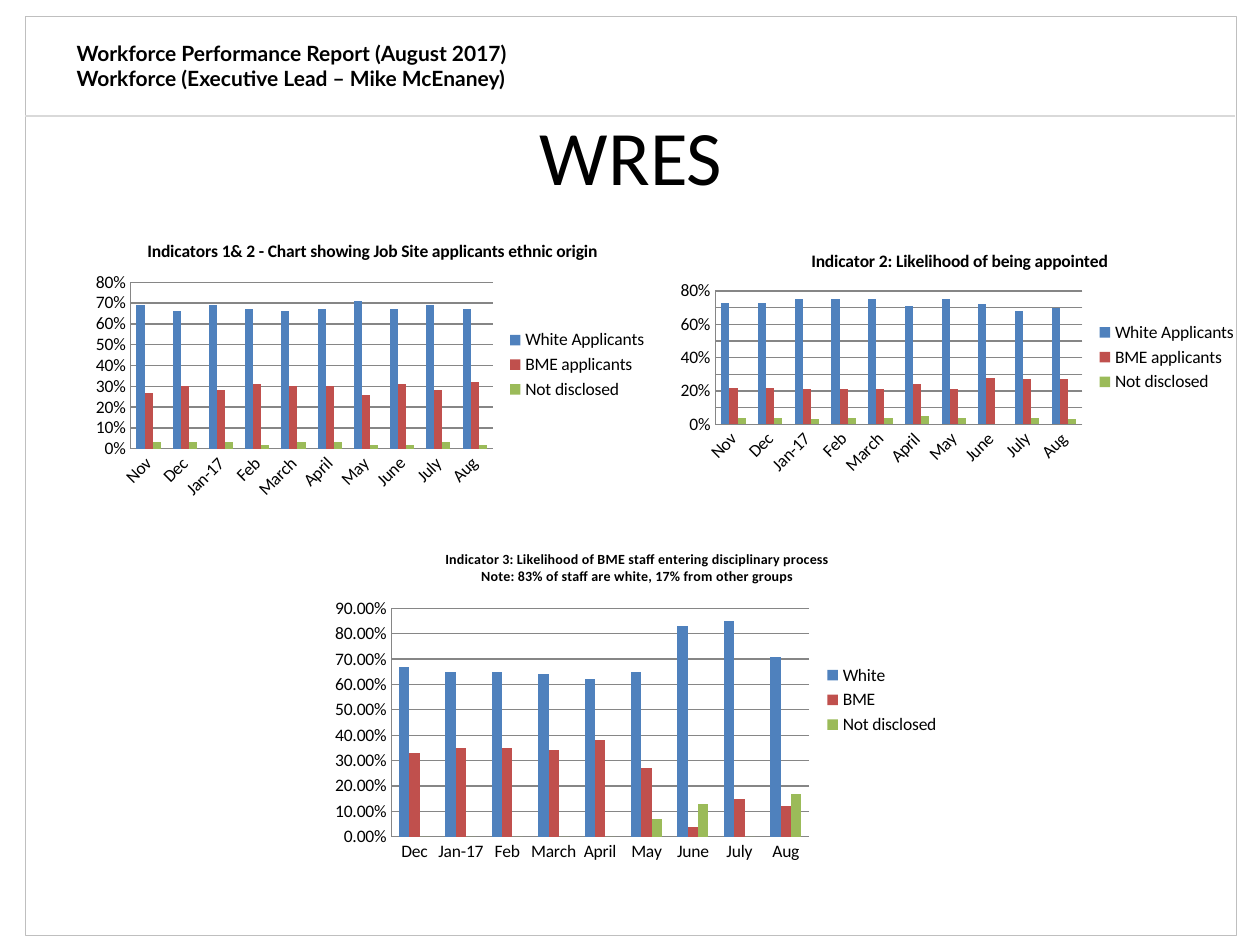
from pptx import Presentation
from pptx.chart.data import CategoryChartData
from pptx.dml.color import RGBColor
from pptx.enum.chart import XL_CHART_TYPE as ChartType, XL_LEGEND_POSITION as LegendPosition, XL_TICK_MARK as TickMark
from pptx.enum.shapes import MSO_CONNECTOR as Connector, MSO_SHAPE as Shape
from pptx.enum.text import MSO_ANCHOR as Anchor, PP_ALIGN as Align
from pptx.oxml.ns import qn
from pptx.util import Pt
from lxml.etree import SubElement

# Content
HEADER = ["Workforce Performance Report (August 2017)",
          "Workforce (Executive Lead – Mike McEnaney)"]
TITLE = "WRES"
MONTHS = ["Nov", "Dec", "Jan-17", "Feb", "March", "April", "May", "June", "July", "Aug"]
APPLICANT_GROUPS = ["White Applicants", "BME applicants", "Not disclosed"]
STAFF_GROUPS = ["White", "BME", "Not disclosed"]
CHARTS = [
    dict(title=["Indicators 1& 2 - Chart showing Job Site applicants ethnic origin"], title_size=10,
         place=(48.24, 128.16, 329.04, 160.56), months=MONTHS, top=0.8, format="0%",
         groups=APPLICANT_GROUPS, values=[
             [0.69, 0.66, 0.69, 0.67, 0.66, 0.67, 0.71, 0.67, 0.69, 0.67],
             [0.27, 0.3, 0.28, 0.31, 0.3, 0.3, 0.26, 0.31, 0.28, 0.32],
             [0.03, 0.03, 0.03, 0.02, 0.03, 0.03, 0.02, 0.02, 0.03, 0.02]]),
    dict(title=["Indicator 2: Likelihood of being appointed"], title_size=10,
         place=(382.32, 133.92, 331.92, 140.4), months=MONTHS, top=0.8, format="0%",
         groups=APPLICANT_GROUPS, values=[
             [0.73, 0.73, 0.75, 0.75, 0.75, 0.71, 0.75, 0.72, 0.68, 0.7],
             [0.22, 0.22, 0.21, 0.21, 0.21, 0.24, 0.21, 0.28, 0.27, 0.27],
             [0.04, 0.04, 0.03, 0.04, 0.04, 0.05, 0.04, None, 0.04, 0.03]]),
    dict(title=["Indicator 3: Likelihood of BME staff entering disciplinary process",
                "Note: 83% of staff are white, 17% from other groups"], title_size=8,
         place=(184.32, 303.84, 360, 192.24), months=MONTHS[1:], top=0.9, format="0.00%",
         groups=STAFF_GROUPS, values=[
             [0.67, 0.65, 0.65, 0.64, 0.62, 0.65, 0.83, 0.85, 0.71],
             [0.33, 0.35, 0.35, 0.34, 0.38, 0.27, 0.04, 0.15, 0.12],
             [0, 0, 0, 0, 0, 0.07, 0.13, 0, 0.17]]),
]
COLORS = dict(text="000000", frame="BFBFBF", rule="D9D9D9", axis="868686")
SERIES_COLORS = ["4F81BD", "C0504D", "9BBB59"]


def color(value):
    return RGBColor.from_string(value)


def style_font(font, name, size, bold=False):
    font.name, font.size, font.bold = name, Pt(size), bold
    font.color.rgb = color(COLORS["text"])


def style_line(line, value, width):
    line.color.rgb = color(value)
    line.width = Pt(width)


def add_column_chart(page, item):
    data = CategoryChartData(number_format=item["format"])
    data.categories = item["months"]
    for name, values in zip(item["groups"], item["values"]):
        data.add_series(name, values)
    place = [Pt(length) for length in item["place"]]
    chart = page.shapes.add_chart(ChartType.COLUMN_CLUSTERED, *place, data).chart
    style_font(chart.font, "Calibri", 10)

    # Chart title
    chart.has_title = True
    frame = chart.chart_title.text_frame
    for index, line in enumerate(item["title"]):
        para = frame.paragraphs[0] if index == 0 else frame.add_paragraph()
        span = para.add_run()
        span.text = line
        style_font(span.font, "Calibri", item["title_size"], True)
    chart.chart_title.include_in_layout = False

    # Legend
    chart.has_legend = True
    chart.legend.position = LegendPosition.RIGHT
    chart.legend.include_in_layout = False

    # Axes
    value_axis = chart.value_axis
    value_axis.minimum_scale, value_axis.maximum_scale = 0, item["top"]
    value_axis.major_unit = 0.1
    value_axis.tick_labels.number_format = item["format"]
    value_axis.tick_labels.number_format_is_linked = False
    style_line(value_axis.major_gridlines.format.line, COLORS["axis"], 0.75)
    for axis in (value_axis, chart.category_axis):
        axis.major_tick_mark = axis.minor_tick_mark = TickMark.NONE
        style_line(axis.format.line, COLORS["axis"], 0.75)

    # Columns
    plot = chart.plots[0]
    plot.gap_width, plot.overlap = 150, 0
    plot.vary_by_categories = False
    for series, value in zip(plot.series, SERIES_COLORS):
        series.format.fill.solid()
        series.format.fill.fore_color.rgb = color(value)


deck = Presentation()
deck.slide_width, deck.slide_height = Pt(720), Pt(540)
page = deck.slides.add_slide(deck.slide_layouts[5])

# Page frame and header rule
border = page.shapes.add_shape(Shape.RECTANGLE, Pt(14.4), Pt(9.36), Pt(691.92), Pt(524.88))
border.shadow.inherit = False
border.fill.background()
style_line(border.line, COLORS["frame"], 0.25)
rule = page.shapes.add_connector(Connector.STRAIGHT, Pt(14.4), Pt(66.24), Pt(705.6), Pt(66.24))
style_line(rule.line, COLORS["rule"], 0.75)
SubElement(rule._element.spPr, qn("a:effectLst"))

# Report header
box = page.shapes.add_textbox(Pt(36.72), Pt(19.44), Pt(360), Pt(36))
box.text_frame.word_wrap = True
para = box.text_frame.paragraphs[0]
for index, line in enumerate(HEADER):
    if index:
        para.add_line_break()
    span = para.add_run()
    span.text = line
    style_font(span.font, "Lato", 12, True)

# Slide title
title = page.shapes.title
title.left, title.top, title.width, title.height = Pt(36.72), Pt(43.2), Pt(648), Pt(90)
title.text_frame.vertical_anchor = Anchor.MIDDLE
para = title.text_frame.paragraphs[0]
para.alignment = Align.CENTER
span = para.add_run()
span.text = TITLE
style_font(span.font, "Calibri", 44)

# Indicator charts
for item in CHARTS:
    add_column_chart(page, item)

deck.save("out.pptx")
